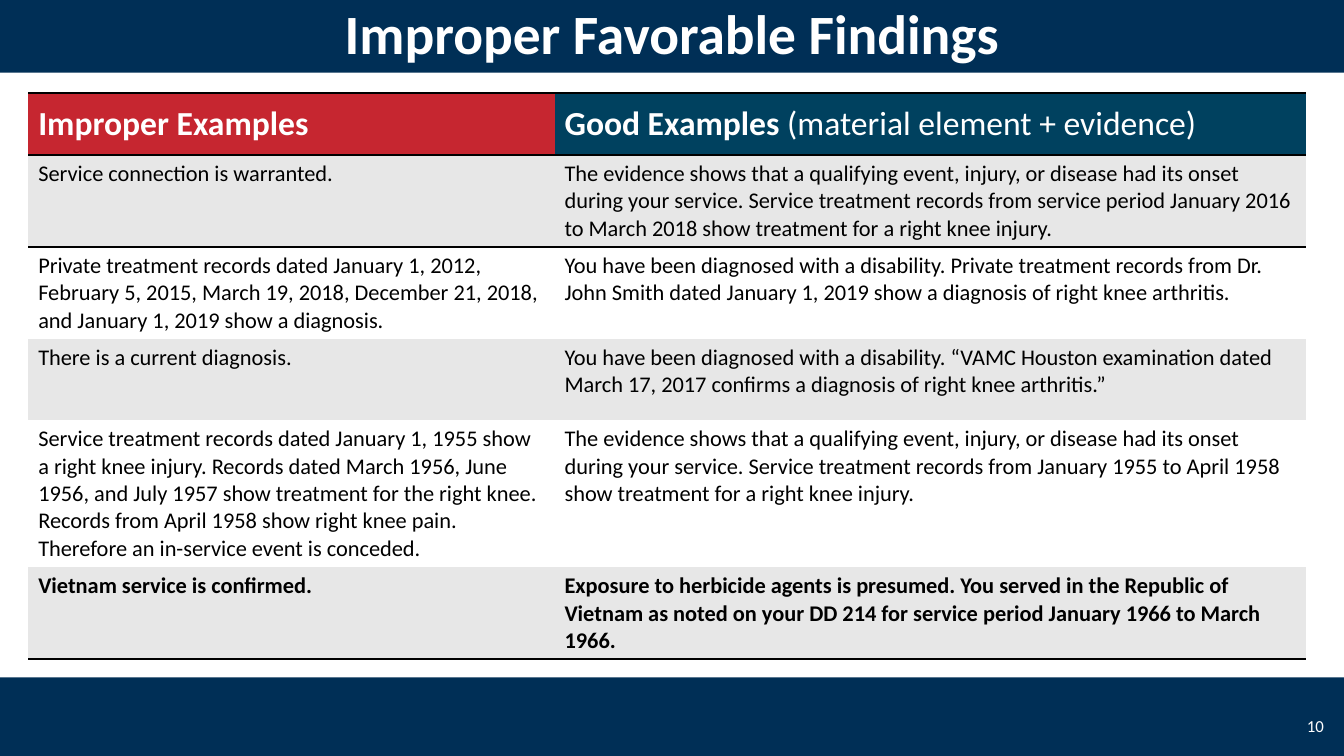
from lxml.etree import SubElement
from pptx import Presentation
from pptx.dml.color import RGBColor
from pptx.enum.shapes import MSO_SHAPE
from pptx.enum.text import MSO_ANCHOR, MSO_AUTO_SIZE, PP_ALIGN
from pptx.oxml.ns import qn
from pptx.util import Inches, Pt

NAVY = RGBColor(0x00, 0x2F, 0x56)
RED = RGBColor(0xC6, 0x26, 0x30)
TEAL = RGBColor(0x00, 0x41, 0x5F)
GRAY = RGBColor(0xE7, 0xE7, 0xE7)
WHITE = RGBColor(0xFF, 0xFF, 0xFF)
BLACK = RGBColor(0x00, 0x00, 0x00)
FONT = "Calibri"
PLAIN_TABLE_STYLE = "{2D5ABB26-0587-4C30-8999-92F81FD0307C}"

PAGE_WIDTH, PAGE_HEIGHT = 13.33, 7.5
TITLE_AREA = (0, -0.08, PAGE_WIDTH, 0.8)
FOOTER_AREA = (0, 6.72, PAGE_WIDTH, 0.8)
NUMBER_AREA = (12.67, 7, 0.56, 0.4)
COLUMN_WIDTHS = (5.22, 7.45)
ROW_HEIGHTS = (0.62, 0.91, 0.91, 0.81, 1.46, 0.91)

HEADERS = (
    (RED, [("Improper Examples", True)]),
    (TEAL, [("Good Examples ", True), ("(material element + evidence)", False)]),
)
EXAMPLES = (
    ("Service connection is warranted.",
     "The evidence shows that a qualifying event, injury, or disease had its onset "
     "during your service. Service treatment records from service period January 2016 "
     "to March 2018 show treatment for a right knee injury."),
    ("Private treatment records dated January 1, 2012, February 5, 2015, March 19, 2018, "
     "December 21, 2018, and January 1, 2019 show a diagnosis.",
     "You have been diagnosed with a disability. Private treatment records from Dr. "
     "John Smith dated January 1, 2019 show a diagnosis of right knee arthritis."),
    ("There is a current diagnosis.",
     "You have been diagnosed with a disability. “VAMC Houston examination dated "
     "March 17, 2017 confirms a diagnosis of right knee arthritis.”"),
    ("Service treatment records dated January 1, 1955 show a right knee injury. Records "
     "dated March 1956, June 1956, and July 1957 show treatment for the right knee. "
     "Records from April 1958 show right knee pain. Therefore an in-service event is "
     "conceded.",
     "The evidence shows that a qualifying event, injury, or disease had its onset "
     "during your service. Service treatment records from January 1955 to April 1958 "
     "show treatment for a right knee injury."),
    ("Vietnam service is confirmed.",
     "Exposure to herbicide agents is presumed. You served in the Republic of Vietnam "
     "as noted on your DD 214 for service period January 1966 to March 1966."),
)


def inches(area):
    return [Inches(length) for length in area]


def add_span(para, text, size, color, bold=False):
    span = para.add_run()
    span.text = text
    span.font.name = FONT
    span.font.size = Pt(size)
    span.font.bold = bold
    span.font.color.rgb = color


def add_bar(page, area):
    bar = page.shapes.add_shape(MSO_SHAPE.RECTANGLE, *inches(area))
    bar.shadow.inherit = False
    bar.fill.solid()
    bar.fill.fore_color.rgb = NAVY
    bar.line.fill.background()
    page.shapes.title.element.addprevious(bar.element)


def fill_title(page, text):
    title = page.shapes.title
    title.left, title.top, title.width, title.height = inches(TITLE_AREA)
    frame = title.text_frame
    frame.auto_size = MSO_AUTO_SIZE.NONE
    frame.vertical_anchor = MSO_ANCHOR.MIDDLE
    para = frame.paragraphs[0]
    para.alignment = PP_ALIGN.CENTER
    add_span(para, text, 39.6, WHITE, True)


def add_page_number(page, text):
    frame = page.shapes.add_textbox(*inches(NUMBER_AREA)).text_frame
    frame.word_wrap = True
    frame.vertical_anchor = MSO_ANCHOR.MIDDLE
    para = frame.paragraphs[0]
    para.alignment = PP_ALIGN.RIGHT
    add_span(para, text, 12, WHITE)


def add_borders(cell, sides):
    properties = cell._tc.get_or_add_tcPr()
    for position, side in enumerate(sides):
        line = SubElement(properties, qn(f"a:ln{side}"), w=str(Pt(2)))
        fill = SubElement(line, qn("a:solidFill"))
        SubElement(fill, qn("a:srgbClr"), val=str(BLACK))
        properties.insert(position, line)


def fill_cell(cell, spans, size, color, background, anchor):
    cell.fill.solid()
    cell.fill.fore_color.rgb = background
    cell.vertical_anchor = anchor
    for text, bold in spans:
        add_span(cell.text_frame.paragraphs[0], text, size, color, bold)


def add_examples_table(page):
    area = (0.28, 0.92, sum(COLUMN_WIDTHS), sum(ROW_HEIGHTS))
    frame = page.shapes.add_table(len(ROW_HEIGHTS), len(COLUMN_WIDTHS), *inches(area))
    table = frame.table
    table.first_row = table.horz_banding = False
    frame.element.find(f".//{qn('a:tableStyleId')}").text = PLAIN_TABLE_STYLE
    for column, width in zip(table.columns, COLUMN_WIDTHS):
        column.width = Inches(width)
    for row, height in zip(table.rows, ROW_HEIGHTS):
        row.height = Inches(height)

    for cell, (background, spans) in zip(table.rows[0].cells, HEADERS):
        fill_cell(cell, spans, 24, WHITE, background, MSO_ANCHOR.MIDDLE)
        add_borders(cell, "TB")
    last = len(EXAMPLES)
    for number, texts in enumerate(EXAMPLES, 1):
        background = GRAY if number % 2 else WHITE
        for cell, text in zip(table.rows[number].cells, texts):
            spans = [(text, number == last)]
            fill_cell(cell, spans, 16, BLACK, background, MSO_ANCHOR.TOP)
            if number == 1:
                add_borders(cell, "T")
            if number == last:
                add_borders(cell, "B")


def main():
    deck = Presentation()
    deck.slide_width = Inches(PAGE_WIDTH)
    deck.slide_height = Inches(PAGE_HEIGHT)
    page = deck.slides.add_slide(deck.slide_layouts[5])
    add_bar(page, FOOTER_AREA)
    add_bar(page, TITLE_AREA)
    fill_title(page, "Improper Favorable Findings")
    add_page_number(page, "10")
    add_examples_table(page)
    deck.save("out.pptx")


if __name__ == "__main__":
    main()
